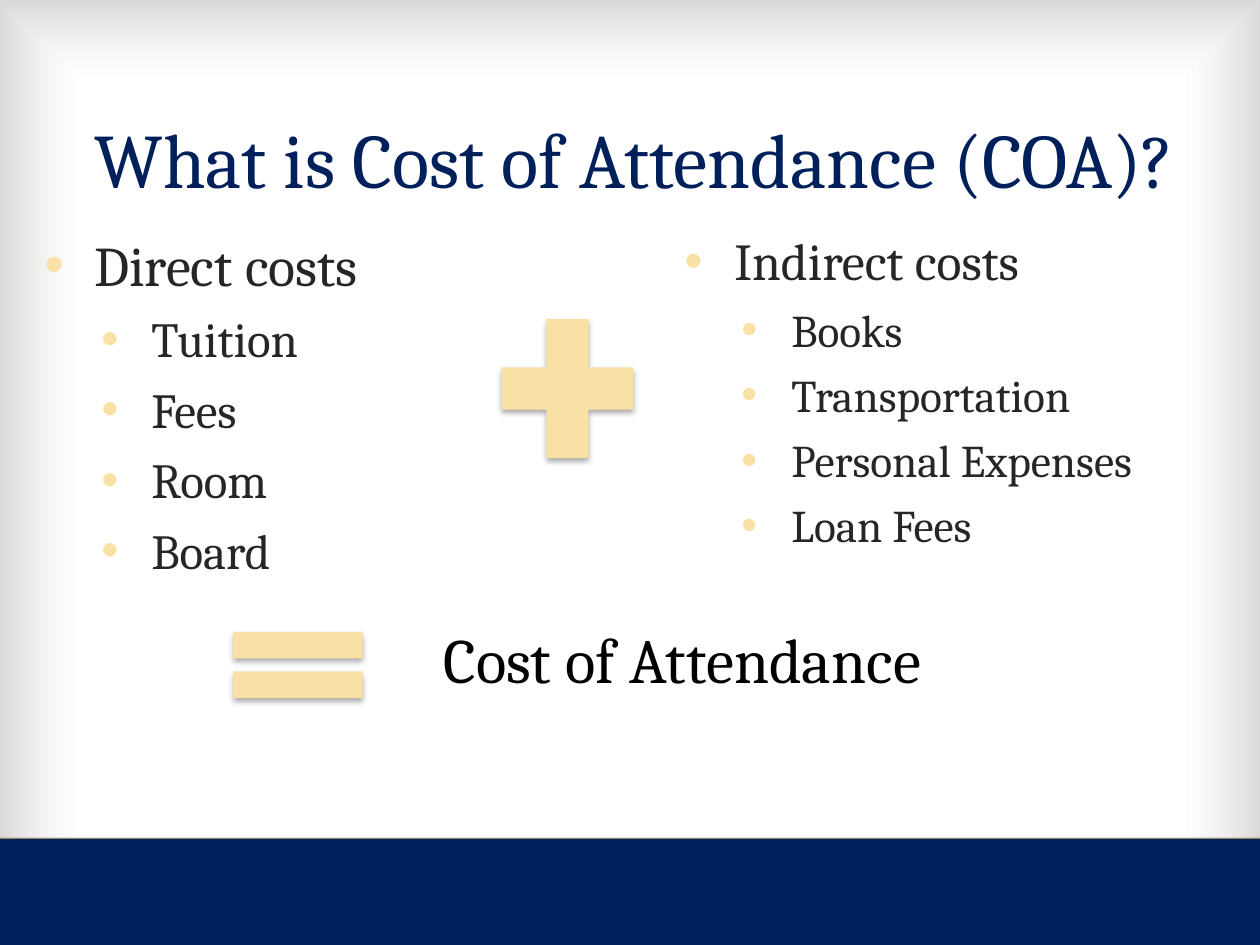
"""Build the slide that adds direct and indirect costs into the cost of attendance."""
from lxml import etree
from pptx import Presentation
from pptx.dml.color import RGBColor
from pptx.enum.shapes import MSO_SHAPE
from pptx.enum.text import MSO_ANCHOR, PP_ALIGN
from pptx.oxml import parse_xml
from pptx.oxml.ns import nsdecls, qn
from pptx.util import Emu, Pt

RECTANGLE = MSO_SHAPE.RECTANGLE
PLUS, EQUAL = MSO_SHAPE.MATH_PLUS, MSO_SHAPE.MATH_EQUAL
CENTER, LEFT = PP_ALIGN.CENTER, PP_ALIGN.LEFT
MIDDLE, TOP = MSO_ANCHOR.MIDDLE, MSO_ANCHOR.TOP

PX = 914400 // 126
FONT = "Cambria"
NAVY, GOLD, BRONZE, INK, BLACK = "00205C", "F9E0A4", "95855D", "262626", "000000"
INDENTS = (50, 107)
HANGING = 50
SPACE_RATIO = 0.234

PAGE = (0, 0, 1260, 945)
BAND = (-4, 838, 1264, 107)
VIGNETTE = ((83, "FFFFFF", 11), (100, "635A54", 23))

LABELS = (
    ("What is Cost of Attendance (COA)?", (10, 102, 1250, 111), 44, NAVY, CENTER, MIDDLE),
    ("Cost of Attendance", (431, 614, 798, 127), 36, BLACK, LEFT, TOP),
)
COST_LISTS = (
    ((32, 224, 494, 410), (32, 28),
     ("Direct costs", "Tuition", "Fees", "Room", "Board")),
    ((672, 223, 567, 326), (29.6, 25.9),
     ("Indirect costs", "Books", "Transportation", "Personal Expenses", "Loan Fees")),
)
SYMBOLS = ((EQUAL, (210, 609, 176, 112)), (PLUS, (478, 294, 179, 189)))


def px(value):
    return Emu(value * PX)


def color(value):
    return RGBColor.from_string(value)


def add_shape(page, kind, place, fill, line=None):
    shape = page.shapes.add_shape(kind, *map(px, place))
    shape.shadow.inherit = False
    shape.fill.solid()
    shape.fill.fore_color.rgb = color(fill)
    if line:
        shape.line.color.rgb = color(line)
        shape.line.width = Pt(0.25)
    else:
        shape.line.fill.background()
    return shape


def add_vignette(page):
    shape = add_shape(page, RECTANGLE, PAGE, "FFFFFF")
    stops = "".join(
        f'<a:gs pos="{position * 1000}"><a:srgbClr val="{tone}">'
        f'<a:alpha val="{alpha * 1000}"/></a:srgbClr></a:gs>'
        for position, tone, alpha in VIGNETTE)
    gradient = parse_xml(
        f'<a:gradFill {nsdecls("a")} rotWithShape="1"><a:gsLst>{stops}</a:gsLst>'
        '<a:path path="rect"><a:fillToRect l="50000" t="50000" r="50000" b="50000"/>'
        '</a:path></a:gradFill>')
    properties = shape._element.spPr
    properties.replace(properties.find(qn("a:solidFill")), gradient)


def add_symbol(page, kind, place):
    shape = add_shape(page, kind, place, GOLD)
    effects = shape._element.spPr.find(qn("a:effectLst"))
    effects.append(parse_xml(
        f'<a:outerShdw {nsdecls("a")} blurRad="44450" dist="27940" dir="5400000" '
        'algn="ctr" rotWithShape="0"><a:srgbClr val="000000">'
        '<a:alpha val="32000"/></a:srgbClr></a:outerShdw>'))


def add_frame(page, place, anchor=TOP):
    frame = page.shapes.add_textbox(*map(px, place)).text_frame
    frame.word_wrap = True
    frame.vertical_anchor = anchor
    return frame


def write(para, text, size, tone):
    para.text = text
    for span in para.runs:
        span.font.name = FONT
        span.font.size = Pt(size)
        span.font.color.rgb = color(tone)


def add_bullet(para, level):
    properties = para._p.get_or_add_pPr()
    properties.set("marL", str(px(INDENTS[level])))
    properties.set("indent", str(px(-HANGING)))
    tint = etree.SubElement(properties, qn("a:buClr"))
    etree.SubElement(tint, qn("a:srgbClr")).set("val", GOLD)
    etree.SubElement(properties, qn("a:buFont")).set("typeface", "Arial")
    etree.SubElement(properties, qn("a:buChar")).set("char", "•")


def add_cost_list(page, place, sizes, items):
    frame = add_frame(page, place)
    for index, item in enumerate(items):
        level = min(index, 1)
        para = frame.add_paragraph() if index else frame.paragraphs[0]
        para.level = level
        add_bullet(para, level)
        if index:
            para.space_before = Pt(round(sizes[level] * SPACE_RATIO, 1))
        write(para, item, sizes[level], INK)


def main():
    deck = Presentation()
    deck.slide_width, deck.slide_height = px(PAGE[2]), px(PAGE[3])
    page = deck.slides.add_slide(deck.slide_layouts[6])
    add_vignette(page)
    add_shape(page, RECTANGLE, BAND, NAVY, BRONZE)
    for text, place, size, tone, align, anchor in LABELS:
        para = add_frame(page, place, anchor).paragraphs[0]
        para.alignment = align
        write(para, text, size, tone)
    for place, sizes, items in COST_LISTS:
        add_cost_list(page, place, sizes, items)
    for kind, place in SYMBOLS:
        add_symbol(page, kind, place)
    deck.save("out.pptx")


if __name__ == "__main__":
    main()
